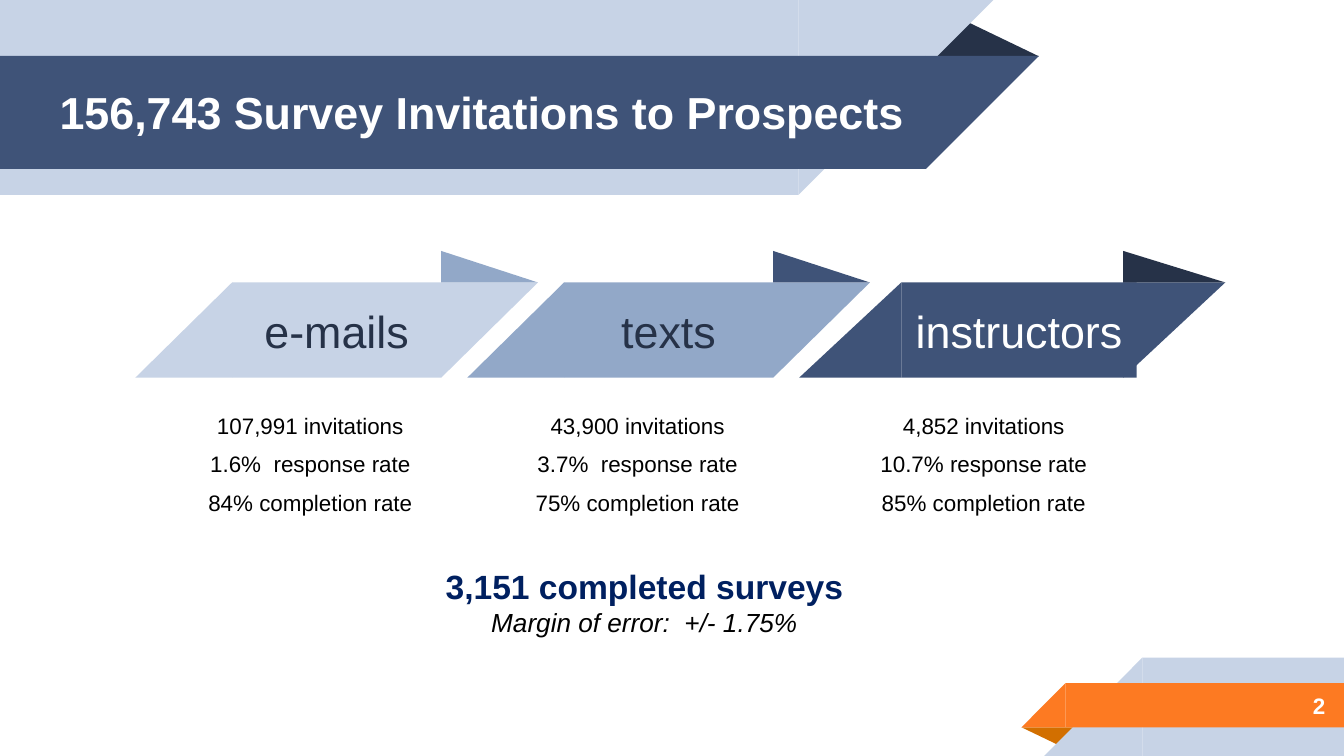
from pptx import Presentation
from pptx.dml.color import RGBColor
from pptx.enum.shapes import MSO_SHAPE
from pptx.enum.text import MSO_ANCHOR, PP_ALIGN
from pptx.util import Inches, Pt

WIDTH = Inches(10)
HEIGHT = WIDTH * 9 // 16
COLORS = {
    "ink": "263248",
    "navy": "3F5378",
    "steel": "92A8C8",
    "mist": "C7D3E6",
    "orange": "FD7A22",
    "rust": "D26F00",
    "total": "002060",
    "black": "000000",
    "white": "FFFFFF",
}
STEP_LEFT, STEP_PITCH, STEP_TOP, STEP_HEIGHT = 10.07, 24.7, 37.37, 12.6
FOLD_TOP = 33.2
STEPS = [
    {"name": "e-mails", "fill": "mist", "fold": "steel", "color": "ink",
     "slant": 7.2, "body": 15.55, "overlap": 0, "facts_left": 13.8,
     "facts": ["107,991 invitations", "1.6%  response rate", "84% completion rate"]},
    {"name": "texts", "fill": "steel", "fold": "navy", "color": "ink",
     "slant": 7.2, "body": 15.55, "overlap": 0, "facts_left": 38.15,
     "facts": ["43,900 invitations", "3.7%  response rate", "75% completion rate"]},
    {"name": "instructors", "fill": "navy", "fold": "ink", "color": "white",
     "slant": 7.6, "body": 17.5, "overlap": 1, "facts_left": 63.9,
     "facts": ["4,852 invitations", "10.7% response rate", "85% completion rate"]},
]


def place(left, top, width, height):
    return [round(share * side / 100) for share, side in
            zip((left, top, width, height), (WIDTH, HEIGHT, WIDTH, HEIGHT))]


def add_run(paragraph, text, size=12, color="black", bold=False, italic=False):
    run = paragraph.add_run()
    run.text = text
    font = run.font
    font.name, font.size = "Arial", Pt(size)
    font.bold, font.italic = bold, italic
    font.color.rgb = RGBColor.from_string(COLORS[color])


def write(shape, lines, align=PP_ALIGN.CENTER, anchor=MSO_ANCHOR.MIDDLE, gap=0, **style):
    frame = shape.text_frame
    frame.word_wrap = True
    frame.vertical_anchor = anchor
    for index, line in enumerate(lines):
        paragraph = frame.paragraphs[0] if index == 0 else frame.add_paragraph()
        paragraph.alignment = align
        paragraph.space_before = Pt(gap if index else 0)
        add_run(paragraph, line, **style)


def add_text(slide, box, lines, **style):
    shape = slide.shapes.add_textbox(*place(*box))
    write(shape, lines, **style)
    return shape


def add_block(slide, kind, box, fill, flipped=False, rotation=0):
    shape = slide.shapes.add_shape(kind, *place(*box))
    shape.shadow.inherit = False
    shape.fill.solid()
    shape.fill.fore_color.rgb = RGBColor.from_string(COLORS[fill])
    shape.line.fill.background()
    shape.rotation = rotation
    if flipped:
        shape.element.spPr.xfrm.set("flipH", "1")
    return shape


def add_fold(slide, box, fill, apex, rotation=0):
    fold = add_block(slide, MSO_SHAPE.ISOSCELES_TRIANGLE, box, fill, rotation=rotation)
    fold.adjustments[0] = apex


def add_ribbon(slide, left, top, body, height, fill, tail=0, head=0, overlap=0):
    band = add_block(slide, MSO_SHAPE.RECTANGLE, (left, top, body, height), fill)
    if tail:
        add_block(slide, MSO_SHAPE.RIGHT_TRIANGLE, (left - tail, top, tail, height),
                  fill, flipped=True)
    if head:
        add_block(slide, MSO_SHAPE.RIGHT_TRIANGLE,
                  (left + body - overlap, top, head, height),
                  fill, flipped=True, rotation=180)
    return band


def add_header(slide):
    add_fold(slide, (68.8, 2.5, 8.5, 4.95), "ink", 0.32)
    add_ribbon(slide, 0, 0, 59.4, 25.78, "mist", head=14.5)
    add_ribbon(slide, 0, 7.4, 68.9, 14.95, "navy", head=8.4)
    add_text(slide, (3.45, 7.3, 66.9, 14.95), ["156,743 Survey Invitations to Prospects"],
             size=24, color="white", bold=True, align=PP_ALIGN.LEFT)


def add_footer(slide):
    add_fold(slide, (76, 96.2, 4.3, 2.5), "rust", 0.32, rotation=180)
    add_ribbon(slide, 85, 87, 15, 13, "mist", tail=7.3)
    add_ribbon(slide, 79.3, 90.35, 20.7, 5.87, "orange", tail=3.3)
    add_text(slide, (83.3, 90.2, 16.3, 6.2), ["2"],
             color="white", bold=True, align=PP_ALIGN.RIGHT)


def add_step(slide, index, step):
    slant, body, overlap = step["slant"], step["body"], step["overlap"]
    left = STEP_LEFT + index * STEP_PITCH + slant
    band = add_ribbon(slide, left, STEP_TOP, body, STEP_HEIGHT, step["fill"],
                      tail=slant, head=slant, overlap=overlap)
    write(band, [step["name"]], size=24, color=step["color"])
    add_fold(slide, (left + body - overlap, FOLD_TOP, slant, STEP_TOP - FOLD_TOP),
             step["fold"], 0)
    add_text(slide, (step["facts_left"], 53.7, 18.6, 15.65), step["facts"],
             anchor=MSO_ANCHOR.TOP, gap=6)


def add_total(slide):
    box = add_text(slide, (28.85, 74, 38.2, 11.4), ["3,151 completed surveys"],
                   size=18, color="total", bold=True, anchor=MSO_ANCHOR.TOP)
    paragraph = box.text_frame.paragraphs[0]
    paragraph.add_line_break()
    add_run(paragraph, "Margin of error:  +/- 1.75%", size=14, italic=True)


def main():
    presentation = Presentation()
    presentation.slide_width, presentation.slide_height = WIDTH, HEIGHT
    slide = presentation.slides.add_slide(presentation.slide_layouts[6])
    add_header(slide)
    add_footer(slide)
    for index, step in enumerate(STEPS):
        add_step(slide, index, step)
    add_total(slide)
    presentation.save("out.pptx")


if __name__ == "__main__":
    main()
